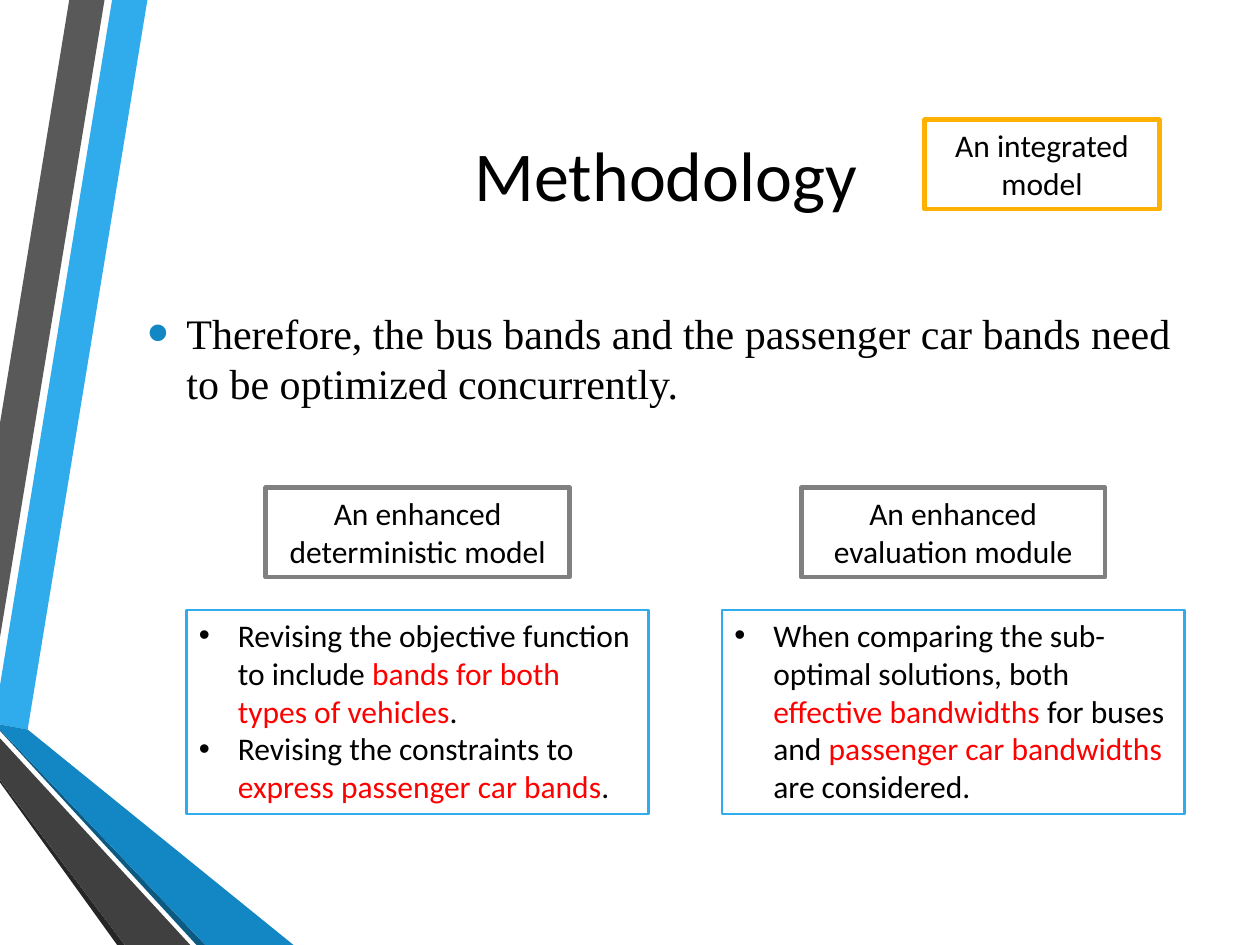
from dataclasses import dataclass

from lxml.etree import SubElement
from pptx import Presentation
from pptx.dml.color import RGBColor as RGB
from pptx.enum.shapes import MSO_SHAPE as SHAPE
from pptx.enum.text import MSO_ANCHOR as ANCHOR, MSO_AUTO_SIZE as AUTO, PP_ALIGN as ALIGN
from pptx.oxml.ns import qn
from pptx.util import Inches, Pt


@dataclass(frozen=True)
class Theme:
    text: str = "000000"
    accent: str = "FF0000"
    paper: str = "FFFFFF"
    gold: str = "FFB000"
    gray: str = "808080"
    sky: str = "30ACEC"
    blue: str = "1287C3"
    navy: str = "0C5A82"
    slate: str = "595959"
    charcoal: str = "404040"
    soot: str = "262626"
    sans: str = "Calibri"
    serif: str = "Times New Roman"
    title_size: int = 40
    body_size: int = 24
    box_size: int = 18


T = Theme()

RIBBONS = [
    (T.sky, [(0, 5.44), (0, 5.75), (0.22, 5.79), (1.17, 0), (0.89, 0)]),
    (T.slate, [(0.83, 0), (0.55, 0), (0, 3.36), (0, 5.06)]),
    (T.soot, [(0, 6.19), (0, 6.21), (0.93, 7.5), (0.99, 7.5)]),
    (T.navy, [(0, 5.79), (0, 5.8), (1.56, 7.5), (1.63, 7.5)]),
    (T.blue, [(0, 5.79), (1.63, 7.5), (2.33, 7.5), (0.22, 5.79), (0, 5.75)]),
    (T.charcoal, [(0, 6.19), (0.99, 7.5), (1.51, 7.5), (0, 5.86)]),
]

COLUMNS = [
    ("An enhanced deterministic model", [
        [("Revising the objective function to include ", T.text),
         ("bands for both types of vehicles", T.accent), (".", T.text)],
        [("Revising the constraints to ", T.text),
         ("express passenger car bands", T.accent), (".", T.text)],
    ]),
    ("An enhanced evaluation module", [
        [("When comparing the sub-optimal solutions, both ", T.text),
         ("effective bandwidths ", T.accent), ("for buses and ", T.text),
         ("passenger car bandwidths ", T.accent), ("are considered.", T.text)],
    ]),
]


def add_run(p, text, size, font=T.sans, color=T.text):
    r = p.add_run()
    r.text = text
    r.font.size = Pt(size)
    r.font.name = font
    r.font.color.rgb = RGB.from_string(color)


def add_bullet(p, color=None, percent=100):
    pPr = p._p.get_or_add_pPr()
    pPr.set("marL", str(Inches(0.31)))
    pPr.set("indent", str(Inches(-0.31)))
    if color:
        SubElement(SubElement(pPr, qn("a:buClr")), qn("a:srgbClr")).set("val", color)
    SubElement(pPr, qn("a:buSzPct")).set("val", str(percent * 1000))
    SubElement(pPr, qn("a:buFont")).set("typeface", "Arial")
    SubElement(pPr, qn("a:buChar")).set("char", "•")


def place(sp, box):
    sp.left, sp.top, sp.width, sp.height = (Inches(v) for v in box)


def add_ribbons(s):
    for color, points in RIBBONS:
        start, *rest = [(Inches(x), Inches(y)) for x, y in points]
        builder = s.shapes.build_freeform(*start)
        builder.add_line_segments(rest, close=True)
        sp = builder.convert_to_shape()
        sp.shadow.inherit = False
        sp.fill.solid()
        sp.fill.fore_color.rgb = RGB.from_string(color)
        sp.line.fill.background()


def add_title(s, box, text):
    sp = s.shapes.title
    place(sp, box)
    s.shapes._spTree.append(sp._element)
    tf = sp.text_frame
    tf.vertical_anchor = ANCHOR.MIDDLE
    p = tf.paragraphs[0]
    p.alignment = ALIGN.CENTER
    add_run(p, text, T.title_size)


def add_body(s, box, text):
    sp = s.placeholders[1]
    place(sp, box)
    s.shapes._spTree.append(sp._element)
    tf = sp.text_frame
    tf.vertical_anchor = ANCHOR.TOP
    p = tf.paragraphs[0]
    p.space_after = Pt(6)
    add_bullet(p, T.blue, 145)
    add_run(p, text, T.body_size, T.serif)


def add_box(s, box, color, width, fill=None):
    sp = s.shapes.add_shape(SHAPE.RECTANGLE, *(Inches(v) for v in box))
    sp.shadow.inherit = False
    if fill:
        sp.fill.solid()
        sp.fill.fore_color.rgb = RGB.from_string(fill)
    else:
        sp.fill.background()
    sp.line.color.rgb = RGB.from_string(color)
    sp.line.width = Pt(width)
    tf = sp.text_frame
    tf.word_wrap = True
    tf.auto_size = AUTO.SHAPE_TO_FIT_TEXT
    tf.vertical_anchor = ANCHOR.TOP
    return tf


def add_label(s, box, text, color, fill=None):
    p = add_box(s, box, color, 2.75, fill).paragraphs[0]
    p.alignment = ALIGN.CENTER
    add_run(p, text, T.box_size)


def add_column(s, box, heading, items):
    left, top, width, height = box
    add_label(s, (left + 0.63, top, 2.41, 0.71), heading, T.gray)
    tf = add_box(s, (left, top + 0.97, width, height - 0.97), T.sky, 1.5)
    for i, runs in enumerate(items):
        p = tf.add_paragraph() if i else tf.paragraphs[0]
        p.alignment = ALIGN.LEFT
        add_bullet(p)
        for text, color in runs:
            add_run(p, text, T.box_size, color=color)


def main():
    prs = Presentation()
    prs.slide_width, prs.slide_height = Inches(10), Inches(7.5)
    s = prs.slides.add_slide(prs.slide_layouts[1])
    add_ribbons(s)
    add_title(s, (1.07, 0.5, 8.43, 1.75), "Methodology")
    add_body(s, (1.07, 2.39, 8.43, 1.16),
             "Therefore, the bus bands and the passenger car bands need "
             "to be optimized concurrently.")
    add_label(s, (7.34, 0.95, 1.86, 0.71), "An integrated model", T.gold, T.paper)
    for i, (heading, items) in enumerate(COLUMNS):
        add_column(s, (1.48 + i * 4.25, 3.87, 3.67, 2.59), heading, items)
    prs.save("out.pptx")


if __name__ == "__main__":
    main()
